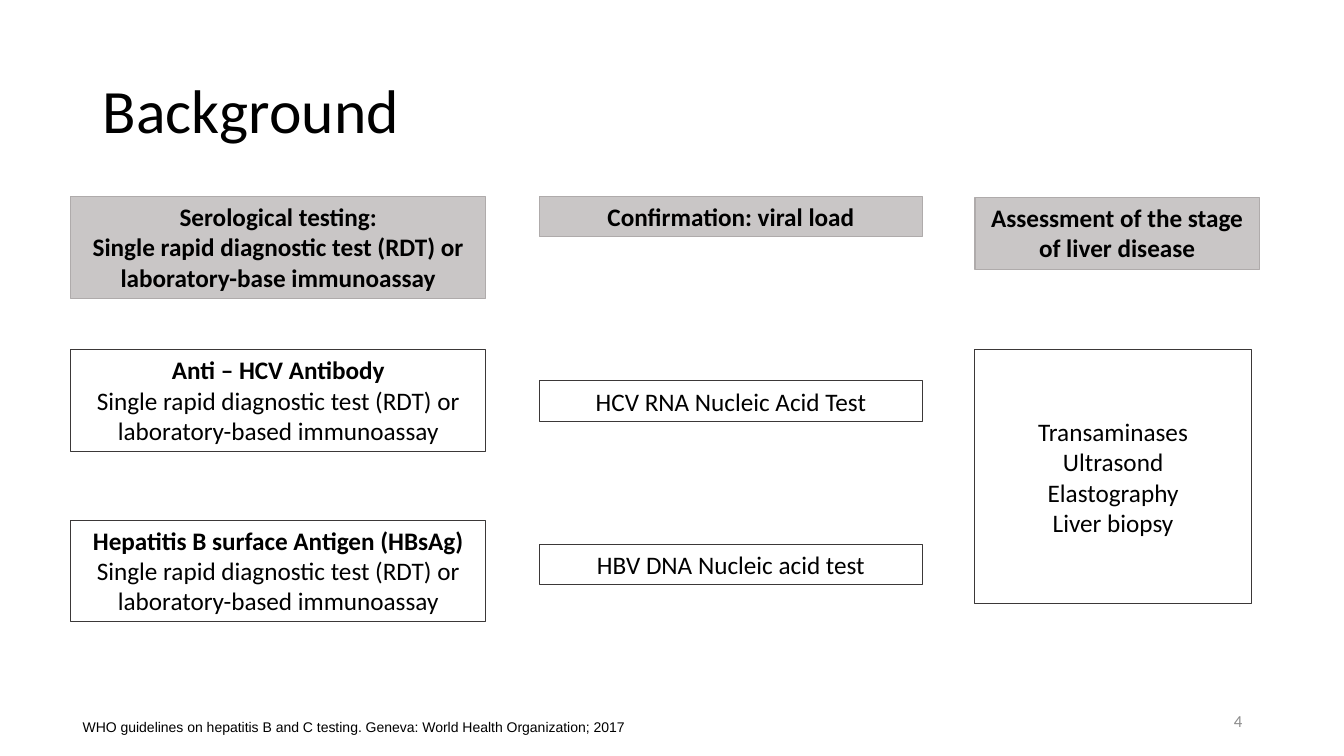
from lxml.etree import SubElement
from pptx import Presentation
from pptx.dml.color import RGBColor
from pptx.enum.shapes import MSO_SHAPE
from pptx.enum.text import MSO_ANCHOR, MSO_AUTO_SIZE, PP_ALIGN
from pptx.oxml.ns import qn
from pptx.util import Pt

BLACK = RGBColor(0x00, 0x00, 0x00)
DARK = RGBColor(0x3B, 0x38, 0x38)
GRAY = RGBColor(0xAF, 0xAB, 0xAB)
PALE = RGBColor(0x8C, 0x8C, 0x8C)
SCALE = 9144


def px(*sizes):
    return [size * SCALE for size in sizes]


class Deck:
    font = "Calibri"

    def __init__(self, width, height):
        self.prs = Presentation()
        self.prs.slide_width, self.prs.slide_height = px(width, height)
        self.slide = self.prs.slides.add_slide(self.prs.slide_layouts[5])

    def style(self, frame, text, size, align, anchor, color=BLACK, font=None, bold=0):
        frame.text = text
        frame.word_wrap = True
        frame.auto_size = MSO_AUTO_SIZE.NONE
        frame.vertical_anchor = anchor
        for row, par in enumerate(frame.paragraphs):
            par.alignment = align
            for run in par.runs:
                run.font.name = font or self.font
                run.font.size = Pt(size)
                run.font.bold = row < bold
                run.font.color.rgb = color

    def title(self, text, *place):
        head = self.slide.shapes.title
        head.left, head.top, head.width, head.height = px(*place)
        self.style(head.text_frame, text, 44, PP_ALIGN.LEFT, MSO_ANCHOR.MIDDLE)
        head.text_frame.paragraphs[0].line_spacing = 0.9

    def box(self, text, *place, bold=0, shaded=False, anchor=MSO_ANCHOR.TOP):
        rect = self.slide.shapes.add_shape(MSO_SHAPE.RECTANGLE, *px(*place))
        rect.shadow.inherit = False
        rect.line.width = Pt(0.75)
        rect.line.color.rgb = GRAY if shaded else DARK
        if shaded:
            rect.fill.solid()
            rect.fill.fore_color.rgb = GRAY
            tint = rect._element.spPr.find(qn("a:solidFill"))[0]
            SubElement(tint, qn("a:alpha")).set("val", "67000")
        else:
            rect.fill.background()
        self.style(rect.text_frame, text, 18, PP_ALIGN.CENTER, anchor, bold=bold)

    def label(self, text, *place, size, align=PP_ALIGN.LEFT,
              anchor=MSO_ANCHOR.TOP, color=BLACK, font=None, inset=None):
        frame = self.slide.shapes.add_textbox(*px(*place)).text_frame
        if inset:
            side, edge = px(*inset)
            frame.margin_left = frame.margin_right = side
            frame.margin_top = frame.margin_bottom = edge
        self.style(frame, text, size, align, anchor, color, font)

    def save(self):
        self.prs.save("out.pptx")


def main():
    deck = Deck(1333, 750)
    deck.title("Background", 92, 40, 1150, 145)

    test = "Single rapid diagnostic test (RDT) or laboratory-base"
    tests = [
        ("Serological testing:", f"{test} immunoassay", 195, 2),
        ("Anti – HCV Antibody", f"{test}d immunoassay", 347, 1),
        ("Hepatitis B surface Antigen (HBsAg)", f"{test}d immunoassay", 516, 1),
    ]
    for row, (name, body, top, bold) in enumerate(tests):
        deck.box(f"{name}\n{body}", 70, top, 412, 101, bold=bold, shaded=row == 0)

    loads = [
        ("Confirmation: viral load", 195),
        ("HCV RNA Nucleic Acid Test", 378),
        ("HBV DNA Nucleic acid test", 540),
    ]
    for row, (name, top) in enumerate(loads):
        first = row == 0
        deck.box(name, 535, top, 380, 40, bold=int(first), shaded=first)

    deck.box("Assessment of the stage of liver disease", 967, 196, 282, 71,
             bold=1, shaded=True)
    deck.box("Transaminases\nUltrasond\nElastography\nLiver biopsy",
             967, 347, 274, 252, anchor=MSO_ANCHOR.MIDDLE)

    deck.label("WHO guidelines on hepatitis B and C testing. "
               "Geneva: World Health Organization; 2017",
               69, 706, 827, 30, size=10, font="Arial", inset=(13, 7))
    deck.label("4", 942, 695, 300, 40, size=12, align=PP_ALIGN.RIGHT,
               anchor=MSO_ANCHOR.MIDDLE, color=PALE)
    deck.save()


if __name__ == "__main__":
    main()
